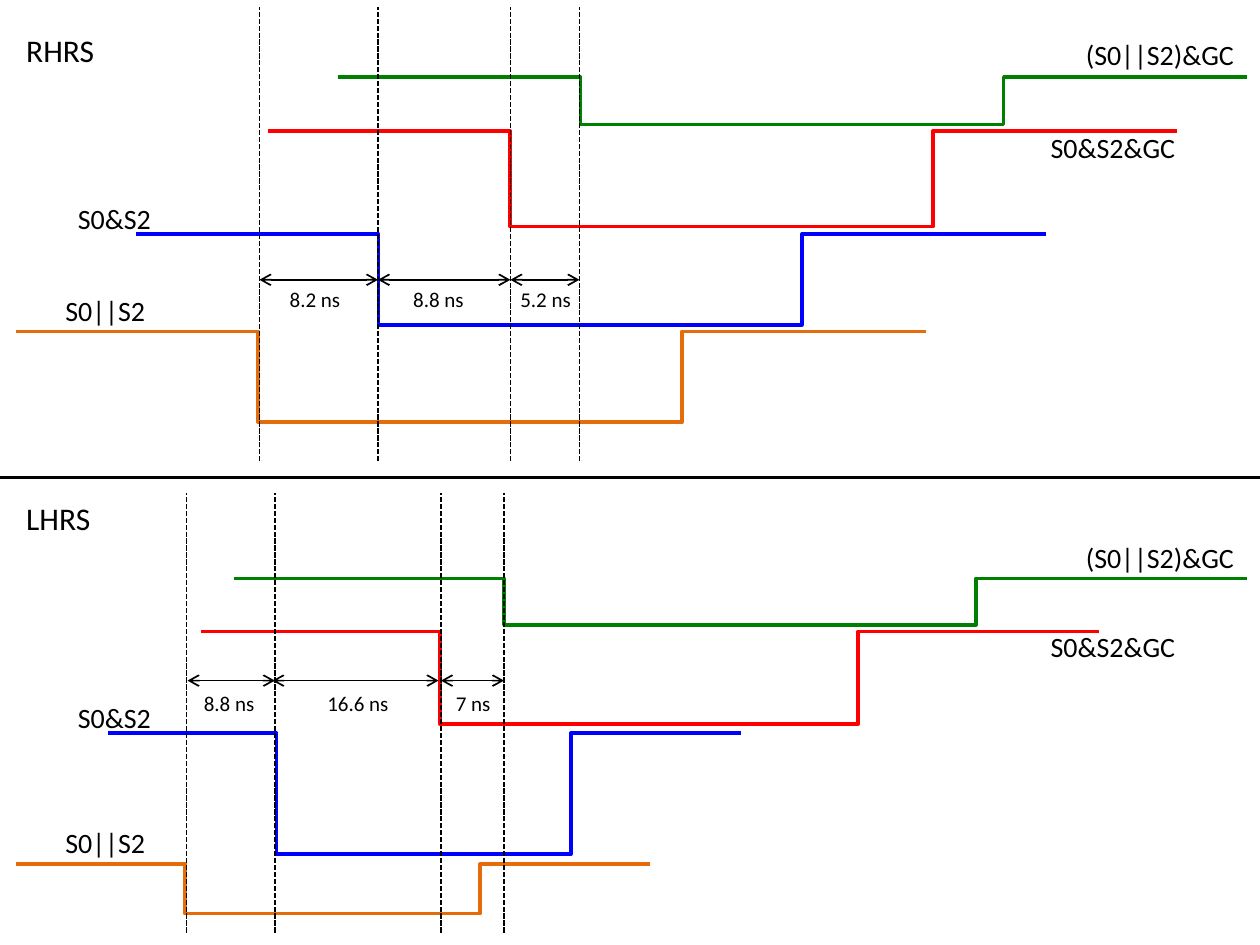
from lxml import etree
from pptx import Presentation
from pptx.dml.color import RGBColor
from pptx.enum.dml import MSO_LINE
from pptx.enum.shapes import MSO_CONNECTOR
from pptx.enum.text import MSO_AUTO_SIZE
from pptx.oxml.ns import qn
from pptx.util import Cm, Pt

STRAIGHT, ELBOW = MSO_CONNECTOR.STRAIGHT, MSO_CONNECTOR.ELBOW
DASH = MSO_LINE.SQUARE_DOT
FIT = MSO_AUTO_SIZE.SHAPE_TO_FIT_TEXT
FONT = "Calibri"
COLORS = {"black": "000000", "orange": "E46C0A", "blue": "0000FF",
          "green": "008000", "red": "FF0000"}

# All positions are in centimetres.
WIDTH, HEIGHT = 25.4, 19.05
DIVIDER_Y = 9.63

# colour: (label, left, width)
SIGNALS = {
    "orange": ("S0||S2", 1.07, 2.13),
    "blue": ("S0&S2", 1.32, 2.01),
    "red": ("S0&S2&GC", 20.93, 3.07),
    "green": ("(S0||S2)&GC", 21.64, 3.53),
}

# waves: colour, start, end of falling part, start of rising part, end,
#        high level, low level, label top
# delays: from, to, text, text left, text width
PANELS = [
    {
        "title": "RHRS", "title_top": 0.51,
        "waves": [
            ("orange", 0.33, 10.08, 8.84, 18.67, 6.68, 8.51, 5.79),
            ("blue", 2.74, 12.52, 11.25, 21.08, 4.72, 6.55, 3.94),
            ("green", 6.81, 16.59, 15.32, 25.15, 1.55, 2.51, 0.64),
            ("red", 5.41, 15.16, 13.89, 23.72, 2.64, 4.57, 2.51),
        ],
        "guides": [5.23, 7.62, 10.29, 11.68],
        "guide_top": 0.14, "guide_bottom": 9.3,
        "delay_y": 5.64, "delay_text_top": 5.66,
        "delays": [
            (5.23, 7.62, "8.2 ns", 5.59, 1.55),
            (7.62, 10.29, "8.8 ns", 8.08, 1.55),
            (10.29, 11.68, "5.2 ns", 10.24, 1.55),
        ],
    },
    {
        "title": "LHRS", "title_top": 9.93,
        "waves": [
            ("orange", 0.33, 7.14, 6.25, 13.11, 17.42, 18.42, 16.51),
            ("blue", 2.18, 8.97, 8.08, 14.94, 14.78, 17.22, 14),
            ("green", 4.72, 15.6, 14.2, 25.15, 11.66, 12.6, 10.77),
            ("red", 4.06, 13.69, 12.45, 22.15, 12.73, 14.6, 12.57),
        ],
        "guides": [3.76, 5.54, 8.89, 10.16],
        "guide_top": 9.94, "guide_bottom": 18.8,
        "delay_y": 13.72, "delay_text_top": 13.79,
        "delays": [
            (3.78, 5.54, "8.8 ns", 3.86, 1.55),
            (5.49, 8.84, "16.6 ns", 6.35, 1.75),
            (8.89, 10.16, "7 ns", 8.94, 1.22),
        ],
    },
]


def add_line(shapes, kind, start, end, color="black", width=1, dash=None):
    line = shapes.add_connector(kind, *map(Cm, start + end))
    line.line.color.rgb = RGBColor.from_string(COLORS[color])
    line.line.width = Pt(width)
    if dash is not None:
        line.line.dash_style = dash
    etree.SubElement(line._element.spPr, qn("a:effectLst"))
    return line


def add_double_arrow(shapes, start, end):
    line = add_line(shapes, STRAIGHT, start, end)
    ln = line.line._get_or_add_ln()
    for tag in ("a:headEnd", "a:tailEnd"):
        etree.SubElement(ln, qn(tag), type="arrow")


def add_text(shapes, text, left, top, width, height, size):
    tf = shapes.add_textbox(*map(Cm, (left, top, width, height))).text_frame
    tf.word_wrap = False
    tf.auto_size = FIT
    p = tf.paragraphs[0]
    p.text = text
    p.font.name = FONT
    p.font.size = Pt(size)
    p.font.color.rgb = RGBColor.from_string(COLORS["black"])


def add_panel(shapes, panel):
    diagram = shapes.add_group_shape().shapes
    for color, x1, fall, rise, x2, high, low, _ in panel["waves"]:
        add_line(diagram, ELBOW, (x1, high), (fall, low), color, 2)
        add_line(diagram, ELBOW, (x2, high), (rise, low), color, 2)
    for x in panel["guides"]:
        add_line(diagram, STRAIGHT, (x, panel["guide_bottom"]),
                 (x, panel["guide_top"]), dash=DASH)

    y = panel["delay_y"]
    for x1, x2, text, left, width in panel["delays"]:
        add_double_arrow(shapes, (x1, y), (x2, y))
        add_text(shapes, text, left, panel["delay_text_top"], width, 0.76, 12)

    add_text(shapes, panel["title"], 0.28, panel["title_top"], 1.9, 1.02, 18)
    for color, *_, top in panel["waves"]:
        label, left, width = SIGNALS[color]
        add_text(shapes, label, left, top, width, 0.94, 16)


def main():
    prs = Presentation()
    prs.slide_width, prs.slide_height = Cm(WIDTH), Cm(HEIGHT)
    s = prs.slides.add_slide(prs.slide_layouts[6])
    for panel in PANELS:
        add_panel(s.shapes, panel)
    add_line(s.shapes, STRAIGHT, (WIDTH, DIVIDER_Y), (0, DIVIDER_Y), width=1.5)
    prs.save("out.pptx")


if __name__ == "__main__":
    main()
